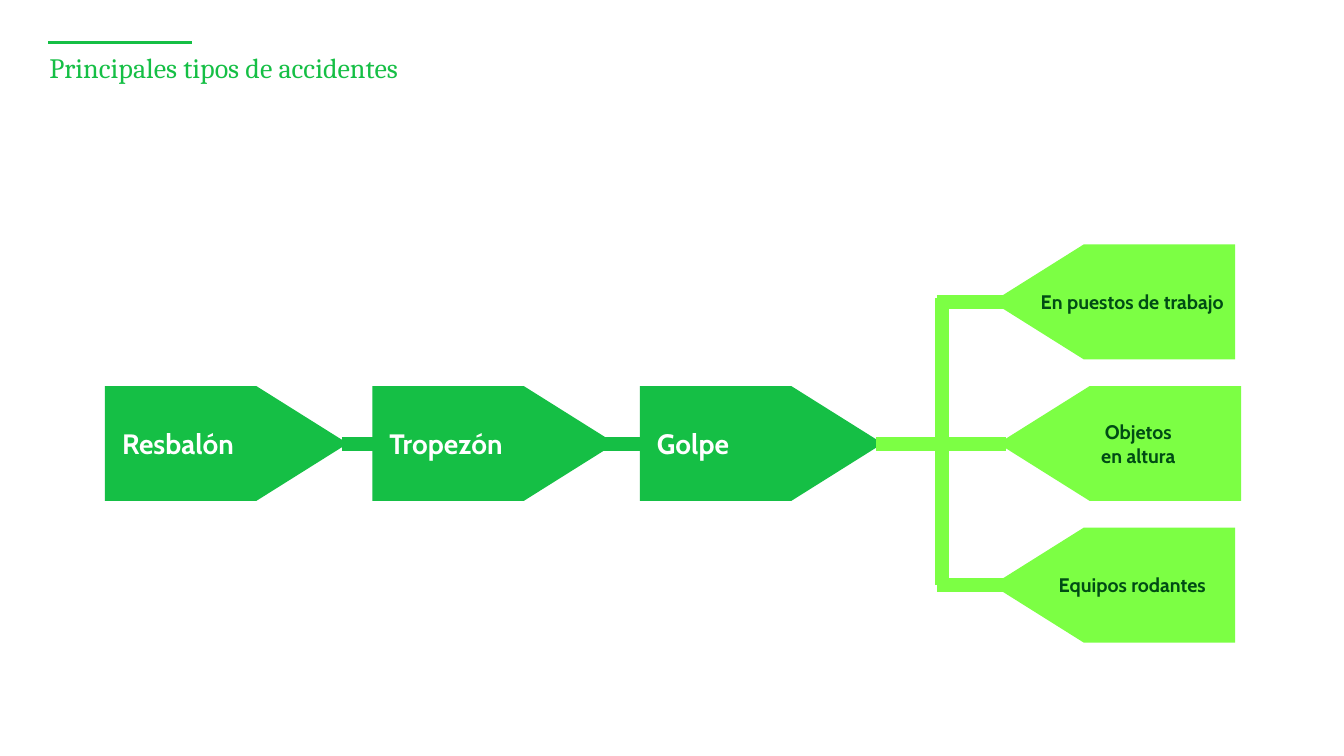
from dataclasses import dataclass

from lxml.etree import SubElement
from pptx import Presentation
from pptx.dml.color import RGBColor
from pptx.enum.shapes import MSO_CONNECTOR
from pptx.enum.text import MSO_ANCHOR, PP_ALIGN
from pptx.oxml.ns import qn
from pptx.util import Inches, Pt


@dataclass(frozen=True)
class Theme:
    green: RGBColor = RGBColor.from_string("15BF45")
    lime: RGBColor = RGBColor.from_string("7CFF44")
    dark: RGBColor = RGBColor.from_string("004C14")
    white: RGBColor = RGBColor.from_string("FFFFFF")
    heading: str = "Cambria"
    body: str = "Cabin"
    large: int = 20
    small: int = 14
    rule: float = 1.75
    link: int = 10


def write(tf, text, *, font, size, color, bold=False, align=PP_ALIGN.LEFT,
          anchor=MSO_ANCHOR.MIDDLE, left=0, right=0, top=0, bottom=0, spacing=1.0):
    tf.word_wrap = True
    tf.vertical_anchor = anchor
    tf.margin_left, tf.margin_right = Inches(left), Inches(right)
    tf.margin_top, tf.margin_bottom = Inches(top), Inches(bottom)
    for i, line in enumerate(text.split("\n")):
        p = tf.paragraphs[0] if i == 0 else tf.add_paragraph()
        p.alignment = align
        p.line_spacing = spacing
        p.space_before = Pt(0)
        r = p.add_run()
        r.text = line
        r.font.name, r.font.size, r.font.bold = font, Pt(size), bold
        r.font.color.rgb = color


def add_arrow(shapes, tail, tip, middle, color):
    half = 0.57
    shoulder = tip + (tail - tip) * 0.377
    fb = shapes.build_freeform(Inches(tail), Inches(middle - half))
    fb.add_line_segments([(Inches(x), Inches(y)) for x, y in (
        (shoulder, middle - half), (tip, middle),
        (shoulder, middle + half), (tail, middle + half))])
    sp = fb.convert_to_shape()
    sp.shadow.inherit = False
    sp.fill.solid()
    sp.fill.fore_color.rgb = color
    sp.line.fill.background()
    return sp


theme = Theme()
prs = Presentation()
prs.slide_width, prs.slide_height = Inches(13.33), Inches(7.5)
s = prs.slides.add_slide(prs.slide_layouts[5])

title = s.shapes.title
title.left, title.top = Inches(0.49), Inches(0.54)
title.width, title.height = Inches(10.79), Inches(0.57)
write(title.text_frame, "Principales tipos de accidentes", font=theme.heading,
      size=theme.large, color=theme.green, anchor=MSO_ANCHOR.TOP, spacing=0.9)

length, axis, pitch = 2.41, 4.4, 1.405

for i, text in enumerate(("Resbalón", "Tropezón", "Golpe")):
    x = 1.04 + i * 2.653
    sp = add_arrow(s.shapes, x, x + length, axis, theme.green)
    write(sp.text_frame, text, font=theme.body, size=theme.large,
          color=theme.white, bold=True, left=0.17, right=0.1)

branches = (("En puestos de trabajo", 9.84), ("Objetos\nen altura", 9.9),
            ("Equipos rodantes", 9.84))
for i, (text, x) in enumerate(branches):
    sp = add_arrow(s.shapes, x + length, x, axis + (i - 1) * pitch, theme.lime)
    write(sp.text_frame, text, font=theme.body, size=theme.small, color=theme.dark,
          bold=True, align=PP_ALIGN.CENTER, left=0.42, right=0.05)

lines = (
    (0.48, 0.42, 1.9, 0.42, theme.green, theme.rule),
    (3.39, axis, 3.82, axis, theme.green, theme.link),
    (5.96, axis, 6.36, axis, theme.green, theme.link),
    (9.34, 2.96, 9.34, 5.8, theme.lime, theme.link),
    (8.69, axis, 9.98, axis, theme.lime, theme.link),
    (9.29, axis - pitch, 10.03, axis - pitch, theme.lime, theme.link),
    (9.29, axis + pitch, 10.03, axis + pitch, theme.lime, theme.link),
)
for x1, y1, x2, y2, color, width in lines:
    c = s.shapes.add_connector(MSO_CONNECTOR.STRAIGHT, Inches(x1), Inches(y1),
                               Inches(x2), Inches(y2))
    c.line.color.rgb = color
    c.line.width = Pt(width)
    SubElement(c._element.spPr, qn("a:effectLst"))

prs.save("out.pptx")
